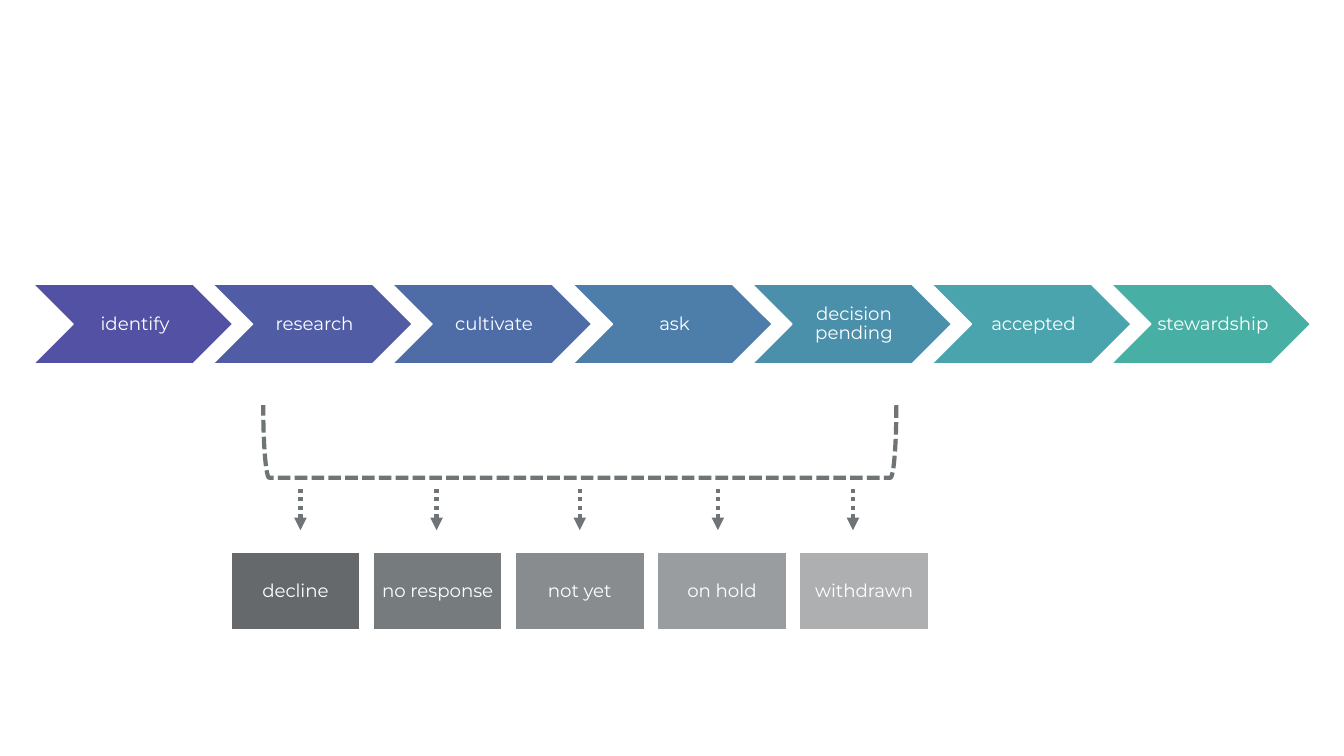
from lxml.etree import SubElement
from pptx import Presentation
from pptx.dml.color import RGBColor
from pptx.enum.dml import MSO_LINE
from pptx.enum.shapes import MSO_CONNECTOR, MSO_SHAPE
from pptx.enum.text import MSO_ANCHOR, PP_ALIGN
from pptx.oxml.ns import qn
from pptx.util import Emu, Pt

PX = 9144  # 100 px to the inch
GREY = "6F7477"
WHITE = "FFFFFF"


def color(target, value):
    target.rgb = RGBColor.from_string(value)


def add_label(kind, box, text, *, fill, margins, space_size):
    shape = slide.shapes.add_shape(kind, *[Emu(value * PX) for value in box])
    shape.shadow.inherit = False
    shape.fill.solid()
    color(shape.fill.fore_color, fill)
    color(shape.line.color, WHITE)
    shape.line.width = Pt(1)
    frame = shape.text_frame
    frame.word_wrap = True
    frame.vertical_anchor = MSO_ANCHOR.MIDDLE
    frame.margin_left, frame.margin_top, frame.margin_right, frame.margin_bottom = [
        Emu(margin * PX) for margin in margins]
    paragraph = frame.paragraphs[0]
    paragraph.alignment = PP_ALIGN.CENTER
    paragraph.line_spacing = 0.9
    # Spaces between words have their own font and size
    for piece in text.replace(" ", "| |").split("|"):
        run = paragraph.add_run()
        run.text = piece
        run.font.name = "Calibri" if piece == " " else "Montserrat"
        run.font.size = Pt(space_size if piece == " " else 13)
        color(run.font.color, WHITE)


presentation = Presentation()
presentation.slide_width = Emu(1333 * PX)
presentation.slide_height = Emu(750 * PX)
slide = presentation.slides.add_slide(presentation.slide_layouts[6])

# Pipeline stages
stages = [
    ("identify", "5351A3"), ("research", "505DA5"), ("cultivate", "4E6DA7"),
    ("ask", "4D7EA9"), ("decision pending", "4B90AB"),
    ("accepted", "4AA4AD"), ("stewardship", "48AFA5"),
]
for index, (text, fill) in enumerate(stages):
    add_label(MSO_SHAPE.CHEVRON, (round(33 + index * 178.2), 282, 198, 79), text,
              fill=fill, margins=(6, 2, 2, 2), space_size=12)

# Outcomes that end the pipeline early
outcomes = [
    ("decline", "65696C"), ("no response", "767B7E"), ("not yet", "888C8E"),
    ("on hold", "9A9D9F"), ("withdrawn", "ADAFB0"),
]
for index, (text, fill) in enumerate(outcomes):
    add_label(MSO_SHAPE.RECTANGLE, (229 + index * 141, 548, 128, 77), text,
              fill=fill, margins=(5, 5, 5, 5), space_size=15)

# Bracket under the stages
bracket = slide.shapes.add_shape(
    MSO_SHAPE.RIGHT_BRACKET, Emu(539 * PX), Emu(124 * PX), Emu(72 * PX), Emu(628 * PX))
bracket.rotation = 90
bracket.shadow.inherit = False
bracket.fill.background()
color(bracket.line.color, GREY)
bracket.line.width = Pt(3)
bracket.line.dash_style = MSO_LINE.SQUARE_DOT

# Arrows from the bracket to the outcomes
for x in (298, 433, 575, 712, 846):
    arrow = slide.shapes.add_connector(
        MSO_CONNECTOR.STRAIGHT, Emu(x * PX), Emu(485 * PX), Emu(x * PX), Emu(526 * PX))
    color(arrow.line.color, GREY)
    arrow.line.width = Pt(3)
    arrow.line.dash_style = MSO_LINE.ROUND_DOT
    properties = arrow._element.spPr
    SubElement(properties.find(qn("a:ln")), qn("a:tailEnd"), type="triangle")
    SubElement(properties, qn("a:effectLst"))

presentation.save("out.pptx")
